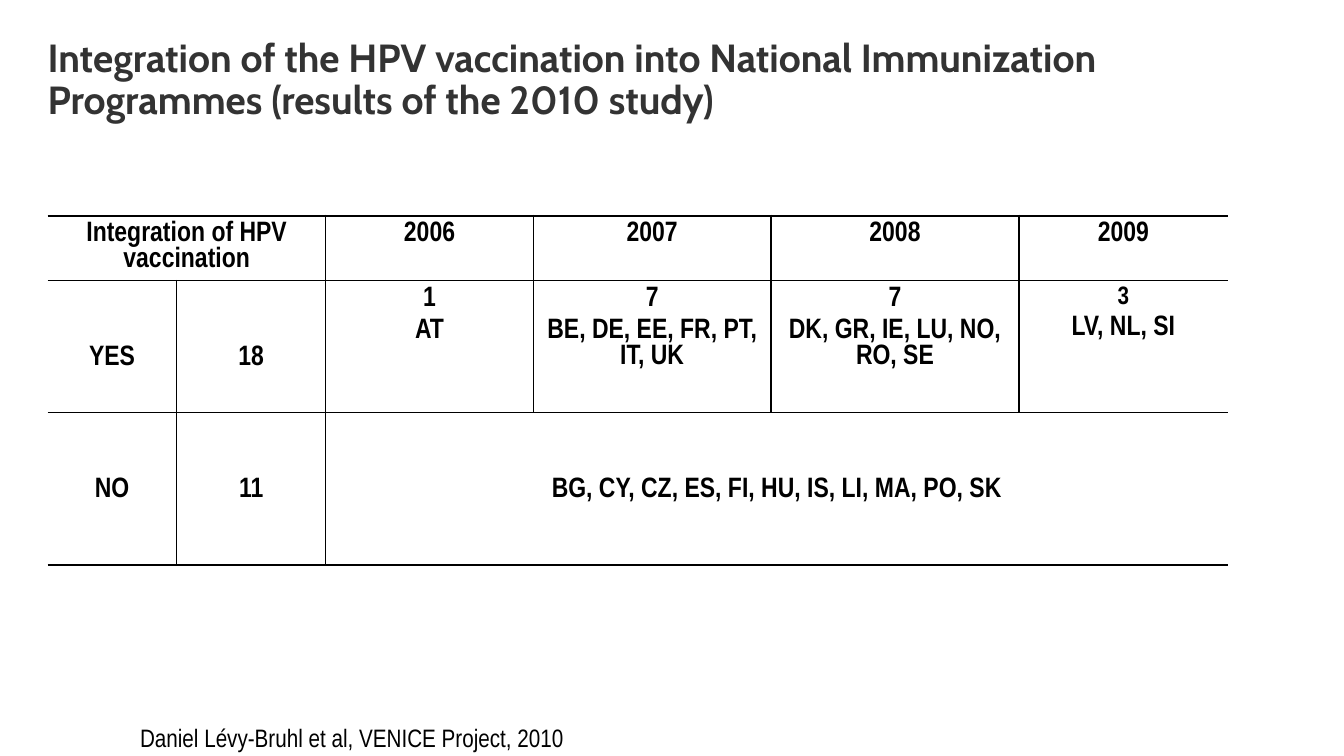
import pptx
import pptx.dml.color
import pptx.enum.text
import pptx.util
from lxml import etree
from pptx.util import Cm

LABEL_FONT = "Arial Narrow"
BLACK = "000000"
COLUMN_WIDTHS = [3.25, 3.76, 5.23, 5.99, 6.25, 5.26]
ROW_HEIGHTS = [1.63, 3.33, 3.84]
LABEL_DROP = 1.63  # space above the text of YES, NO and their neighbours
THIN, THICK = 1, 2.25

# (row, column): text, with one line per paragraph
CELL_TEXTS = {
    (0, 0): "Integration of HPV vaccination",
    (0, 2): "2006",
    (0, 3): "2007",
    (0, 4): "2008",
    (0, 5): "2009",
    (1, 0): "YES",
    (1, 1): "18",
    (1, 2): "1\nAT",
    (1, 3): "7\nBE, DE, EE, FR, PT, IT, UK",
    (1, 4): "7\nDK, GR, IE, LU, NO, RO, SE",
    (1, 5): "3\nLV, NL, SI",
    (2, 0): "NO",
    (2, 1): "11",
    (2, 2): "BG, CY, CZ, ES, FI, HU, IS, LI, MA, PO, SK",
}


def rgb(hex_colour):
    return pptx.dml.color.RGBColor.from_string(hex_colour)


def format_runs(paragraph, font_name, size, colour, bold=False):
    for run in paragraph.runs:
        run.font.name = font_name
        run.font.size = pptx.util.Pt(size)
        run.font.bold = bold
        run.font.color.rgb = rgb(colour)


def add_title(slide, text):
    title = slide.shapes.title
    title.left, title.top, title.width, title.height = Cm(1.2), Cm(0.94), Cm(28.65), Cm(2.2)
    frame = title.text_frame
    frame.text = text
    frame.word_wrap = True
    frame.auto_size = pptx.enum.text.MSO_AUTO_SIZE.NONE
    frame.vertical_anchor = pptx.enum.text.MSO_ANCHOR.MIDDLE
    frame.margin_left = frame.margin_right = frame.margin_top = frame.margin_bottom = 0
    heading = frame.paragraphs[0]
    heading.alignment = pptx.enum.text.PP_ALIGN.LEFT
    heading.line_spacing = 0.9
    format_runs(heading, "Cabin", 28, "333333", bold=True)


def add_border(cell, side, width):
    """Draw one side (L, R, T or B) of a cell; width 0 leaves it without a line."""
    properties = cell._tc.get_or_add_tcPr()
    line = etree.SubElement(properties, pptx.oxml.ns.qn(f"a:ln{side}"))
    line.set("w", str(pptx.util.Pt(width)))
    if width:
        fill = etree.SubElement(line, pptx.oxml.ns.qn("a:solidFill"))
        etree.SubElement(fill, pptx.oxml.ns.qn("a:srgbClr")).set("val", BLACK)
    else:
        etree.SubElement(line, pptx.oxml.ns.qn("a:noFill"))


def rule_cell(table, row, column):
    """Rule between neighbours, heavier above and below the table, open at its sides."""
    cell = table.cell(row, column)
    last_row, last_column = len(ROW_HEIGHTS) - 1, len(COLUMN_WIDTHS) - 1
    opens_left = column == 0 or cell.is_spanned
    opens_right = column == last_column or table.cell(row, column + 1).is_spanned
    add_border(cell, "L", 0 if opens_left else THIN)
    add_border(cell, "R", 0 if opens_right else THIN)
    add_border(cell, "T", THICK if row == 0 else THIN)
    add_border(cell, "B", THICK if row == last_row else THIN)
    cell.fill.background()


def fill_cell(cell, text, top_margin):
    cell.margin_left = cell.margin_right = Cm(0.33)
    cell.margin_top, cell.margin_bottom = Cm(top_margin), Cm(0.13)
    cell.vertical_anchor = pptx.enum.text.MSO_ANCHOR.TOP
    cell.text_frame.text = text
    for index, paragraph in enumerate(cell.text_frame.paragraphs):
        paragraph.alignment = pptx.enum.text.PP_ALIGN.CENTER
        paragraph.space_before = pptx.util.Pt(4 if index else 0)
        format_runs(paragraph, LABEL_FONT, 18 if paragraph.text == "3" else 20, BLACK, bold=True)


def add_integration_table(slide):
    table = slide.shapes.add_table(
        len(ROW_HEIGHTS), len(COLUMN_WIDTHS), Cm(1.2), Cm(5.44),
        Cm(sum(COLUMN_WIDTHS)), Cm(sum(ROW_HEIGHTS)),
    ).table
    table.first_row = table.horz_banding = False
    for column, width in zip(table.columns, COLUMN_WIDTHS):
        column.width = Cm(width)
    for row, height in zip(table.rows, ROW_HEIGHTS):
        row.height = Cm(height)
    table.cell(0, 0).merge(table.cell(0, 1))
    table.cell(2, 2).merge(table.cell(2, 5))
    for row in range(len(ROW_HEIGHTS)):
        for column in range(len(COLUMN_WIDTHS)):
            rule_cell(table, row, column)
    for (row, column), text in CELL_TEXTS.items():
        is_dropped = row == 2 or (row == 1 and column < 2)
        fill_cell(table.cell(row, column), text, LABEL_DROP if is_dropped else 0.13)


def add_citation(slide, text):
    frame = slide.shapes.add_textbox(Cm(3.28), Cm(18.01), Cm(11.33), Cm(1.04)).text_frame
    frame.text = text
    frame.word_wrap = False
    frame.auto_size = pptx.enum.text.MSO_AUTO_SIZE.SHAPE_TO_FIT_TEXT
    frame.paragraphs[0].line_spacing = 1.1
    format_runs(frame.paragraphs[0], LABEL_FONT, 18, BLACK)


def main():
    presentation = pptx.Presentation()
    presentation.slide_width, presentation.slide_height = Cm(33.87), Cm(19.05)
    slide = presentation.slides.add_slide(presentation.slide_layouts[5])
    add_title(slide, "Integration of the HPV vaccination into National Immunization "
                     "Programmes (results of the 2010 study)")
    add_integration_table(slide)
    add_citation(slide, "Daniel Lévy-Bruhl et al, VENICE Project, 2010")
    presentation.save("out.pptx")


if __name__ == "__main__":
    main()
